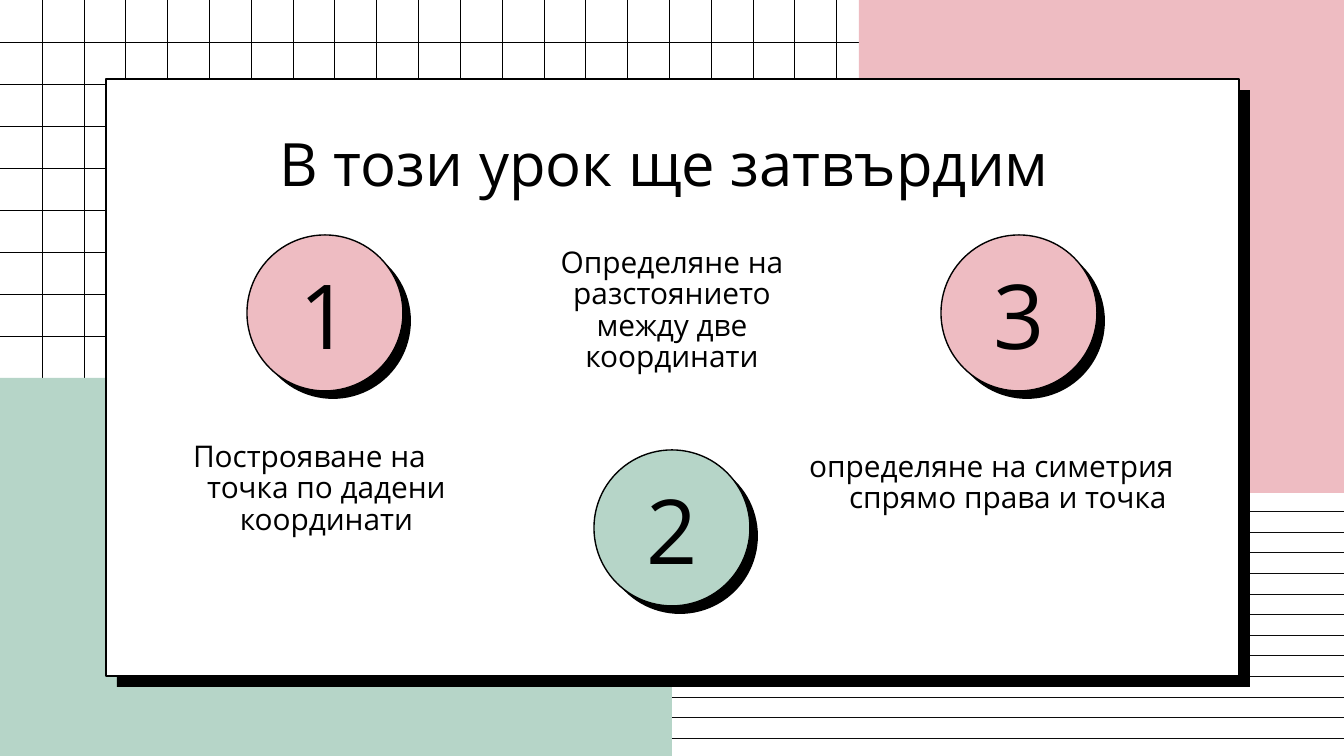
from pptx import Presentation
from pptx.dml.color import RGBColor
from pptx.enum.shapes import MSO_CONNECTOR, MSO_SHAPE
from pptx.enum.text import MSO_ANCHOR, MSO_AUTO_SIZE, PP_ALIGN
from pptx.oxml.ns import qn
from pptx.util import Emu, Pt
from lxml.etree import SubElement

PX = 914400 / 134.4
WIDTH, HEIGHT = 1344, 756
BLACK, WHITE, PINK, GREEN = "000000", "FFFFFF", "EEBCC2", "B6D5C8"
STRIPE = "0B0B0B"
FONT = "Open Sans"


def px(length):
    return Emu(round(length * PX))


def rgb(hex_colour):
    return RGBColor.from_string(hex_colour)


def add_block(slide, box, fill, outline=None, preset=MSO_SHAPE.RECTANGLE):
    block = slide.shapes.add_shape(preset, *map(px, box))
    block.shadow.inherit = False
    block.fill.solid()
    block.fill.fore_color.rgb = rgb(fill)
    if outline:
        block.line.color.rgb = rgb(outline)
        block.line.width = Pt(0.75)
    else:
        block.line.fill.background()


def add_raised(slide, box, fill, offset, preset=MSO_SHAPE.RECTANGLE):
    """Outlined block over a solid black block shifted down and right."""
    left, top, width, height = box
    add_block(slide, (left + offset, top + offset, width, height), BLACK, preset=preset)
    add_block(slide, box, fill, BLACK, preset)


def add_rule(slide, x1, y1, x2, y2, colour, weight):
    rule = slide.shapes.add_connector(MSO_CONNECTOR.STRAIGHT, *map(px, (x1, y1, x2, y2)))
    rule.line.color.rgb = rgb(colour)
    rule.line.width = Pt(weight)
    SubElement(rule._element.spPr, qn("a:effectLst"))


def write(holder, text, box, size, anchor=MSO_ANCHOR.TOP, spacing=1.0,
          margin=0, indent=0, after=0):
    """Place a text holder, bring it to the front and fill it."""
    holder.left, holder.top, holder.width, holder.height = map(px, box)
    holder._element.getparent().append(holder._element)
    frame = holder.text_frame
    frame.word_wrap = True
    frame.auto_size = MSO_AUTO_SIZE.NONE
    frame.vertical_anchor = anchor
    frame.margin_left = frame.margin_right = px(13)
    frame.margin_top = frame.margin_bottom = px(13)
    paragraph = frame.paragraphs[0]
    paragraph.alignment = PP_ALIGN.CENTER
    paragraph.line_spacing = spacing
    paragraph.space_before = Pt(0)
    paragraph.space_after = Pt(after)
    properties = paragraph._p.get_or_add_pPr()
    properties.set("marL", str(px(margin)))
    properties.set("indent", str(px(indent)))
    SubElement(properties, qn("a:buNone"))
    run = paragraph.add_run()
    run.text = text
    run.font.name = FONT
    run.font.size = Pt(size)
    run.font.bold = False
    run.font.color.rgb = rgb(BLACK)


def add_grid(slide, box, columns, rows, deep_columns, deep_rows, arm_width, arm_height):
    """L-shaped grid: a horizontal arm on top and a vertical arm at the left."""
    left, top, width, height = box
    for column in range(1, columns + 1):
        x = left + round(width * column / columns)
        reach = height if column <= deep_columns else arm_height
        add_rule(slide, x, top, x, top + reach, BLACK, 0.19)
    for row in range(1, rows + 1):
        y = top + round(height * row / rows)
        reach = width if row <= deep_rows else arm_width
        add_rule(slide, left, y, left + reach, y, BLACK, 0.19)


def add_stripes(slide, box, count):
    left, top, width, height = box
    for stripe in range(count):
        y = top + round(height * stripe / (count - 1))
        add_rule(slide, left, y, left + width, y, STRIPE, 0.35)


def add_background(slide, box):
    left, top, width, height = box
    middle_x, middle_y = left + width // 2, top + height // 2
    add_grid(slide, (left, top, 878, 378), columns=21, rows=9,
             deep_columns=3, deep_rows=3, arm_width=125, arm_height=126)
    add_block(slide, (left + 859, top, width - 859, 493), PINK)
    add_block(slide, (left, middle_y, width // 2, height // 2), GREEN)
    add_stripes(slide, (middle_x, top + 511, width // 2, 227), 12)


def add_badge(slide, box, number, fill):
    left, top, width, height = box
    add_raised(slide, box, fill, 8, MSO_SHAPE.OVAL)
    label_box = (left + 4, top + 27, width - 8, 103)
    label = slide.shapes.add_textbox(*map(px, label_box))
    write(label, str(number), label_box, 48, anchor=MSO_ANCHOR.MIDDLE)


def add_goals(slide, box, goals):
    """Numbered badges at equal steps, each with its caption."""
    left, top, width, _ = box
    diameter = 156
    step = (width - diameter) // (len(goals) - 1)
    captions = list(slide.placeholders)[1:]
    for index, (text, caption_box, fill, drop, layout) in enumerate(goals):
        badge_box = (left + index * step, top + drop, diameter, diameter)
        add_badge(slide, badge_box, index + 1, fill)
        x, y, caption_width, caption_height = caption_box
        write(captions[index], text, (left + x, top + y, caption_width, caption_height),
              16, spacing=0.88, **layout)
    for spare in captions[len(goals):]:
        spare._element.getparent().remove(spare._element)


def main():
    presentation = Presentation()
    presentation.slide_width, presentation.slide_height = px(WIDTH), px(HEIGHT)
    slide = presentation.slides.add_slide(
        presentation.slide_layouts.get_by_name("Comparison"))

    # text, caption box within the region, badge colour, badge drop, paragraph layout
    goals = [
        ("Построяване на точка по дадени координати",
         (-126, 194, 344, 149), PINK, 0, {"margin": 67, "indent": -34}),
        ("Определяне на разстоянието между две координати",
         (270, 0, 310, 169), GREEN, 215, {"after": 16}),
        ("определяне на симетрия спрямо права и точка",
         (519, 204, 435, 149), PINK, 0, {"margin": 49, "indent": -33}),
    ]
    add_background(slide, (0, 0, WIDTH, HEIGHT))
    add_raised(slide, (106, 79, 1133, 597), WHITE, 11)
    write(slide.shapes.title, "В този урок ще затвърдим ", (106, 114, 1133, 94), 32)
    add_goals(slide, (247, 235, 850, 371), goals)
    presentation.save("out.pptx")


if __name__ == "__main__":
    main()
